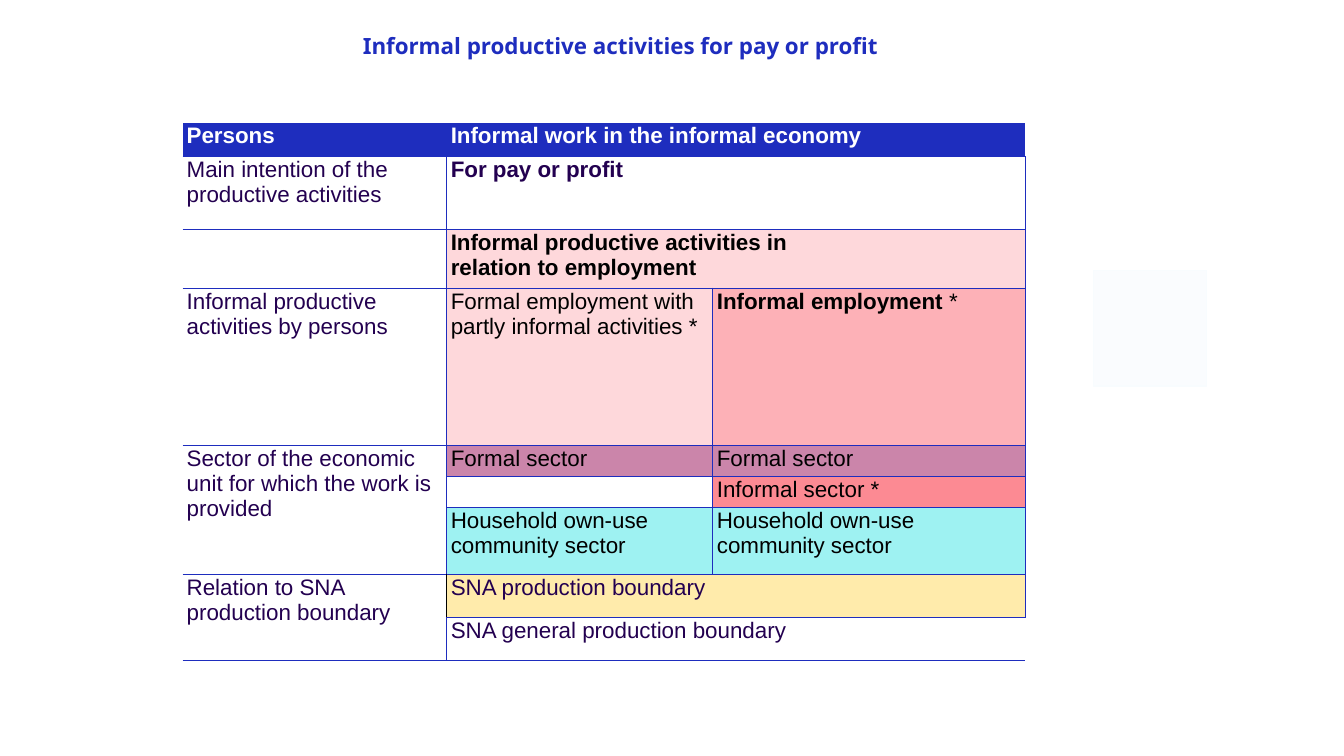
from lxml.etree import SubElement
from pptx import Presentation
from pptx.dml.color import RGBColor
from pptx.enum.shapes import MSO_SHAPE
from pptx.enum.text import PP_ALIGN
from pptx.oxml.ns import qn
from pptx.util import Pt

COLOURS = {
    "blue": "1E2DBE", "white": "FFFFFF", "purple": "230050", "black": "000000",
    "pale pink": "FED8DB", "pink": "FDB1B7", "mauve": "CB85AA", "red": "FC8A93",
    "aqua": "9EF2F2", "yellow": "FFEBAB", "mist": "F8FCFE",
}
EDGES = {
    "boxed": {"L": "blue", "R": "blue", "T": "blue", "B": "blue"},
    "label": {"R": "blue", "T": "blue", "B": "blue"},
    "header": {"B": "blue"},
    "relation": {"T": "blue", "B": "blue"},
    "boundary": {"L": "black", "R": "blue", "T": "blue", "B": "blue"},
    "general": {"L": "blue", "T": "blue", "B": "blue"},
}
COLUMN_WIDTHS = [93.6, 95.04, 190.08, 223.2]
ROW_HEIGHTS = [24.4, 52, 42, 112.2, 22.3, 22.3, 47.5, 31, 30.5]
MARGINS = {"margin_left": Pt(2.88), "margin_right": Pt(2.88),
           "margin_top": Pt(0.72), "margin_bottom": Pt(0.72)}
HOUSEHOLD = "Household own-use community sector"
CELLS = [
    (0, 0, 1, 1, [("Persons", True)], "white", "blue", "header"),
    (0, 1, 1, 1, [], "white", "blue", "header"),
    (0, 2, 1, 2, [("Informal work in the informal economy", True)], "white", "blue", "header"),
    (1, 0, 1, 2, [("Main intention of the productive activities", False)], "purple", None, "label"),
    (1, 2, 1, 2, [("For pay or profit", True)], "purple", None, "boxed"),
    (2, 0, 1, 2, [], "purple", None, "label"),
    (2, 2, 1, 2, [("Informal productive activities in\nrelation to employment", True)],
     "black", "pale pink", "boxed"),
    (3, 0, 1, 2, [("Informal productive\nactivities by persons", False)], "purple", None, "label"),
    (3, 2, 1, 1, [("Formal employment with partly informal activities *", False)],
     "black", "pale pink", "boxed"),
    (3, 3, 1, 1, [("Informal employment ", True), ("*", False)], "black", "pink", "boxed"),
    (4, 0, 3, 2, [("Sector of the economic unit for which the work is provided", False)],
     "purple", None, "label"),
    (4, 2, 1, 1, [("Formal sector", False)], "black", "mauve", "boxed"),
    (4, 3, 1, 1, [("Formal sector", False)], "black", "mauve", "boxed"),
    (5, 2, 1, 1, [], "black", None, "boxed"),
    (5, 3, 1, 1, [("Informal sector *", False)], "black", "red", "boxed"),
    (6, 2, 1, 1, [(HOUSEHOLD, False)], "black", "aqua", "boxed"),
    (6, 3, 1, 1, [(HOUSEHOLD, False)], "black", "aqua", "boxed"),
    (7, 0, 2, 2, [("Relation to SNA production boundary", False)], "purple", None, "relation"),
    (7, 2, 1, 2, [("SNA production boundary", False)], "purple", "yellow", "boundary"),
    (8, 2, 1, 2, [("SNA general production boundary", False)], "purple", None, "general"),
]


def rgb(name):
    """Return the named colour."""
    return RGBColor.from_string(COLOURS[name])


def set_values(target, values):
    """Set each attribute of the target from a dict."""
    for name, value in values.items():
        setattr(target, name, value)


def write_runs(paragraph, runs, colour, face):
    """Write (text, bold) runs at 16 points, breaking lines at newlines."""
    for text, bold in runs:
        for index, line in enumerate(text.split("\n")):
            if index:
                paragraph.add_line_break()
            run = paragraph.add_run()
            run.text = line
            set_values(run.font, {"size": Pt(16), "name": face, "bold": bold})
            run.font.color.rgb = rgb(colour)
    for line_break in paragraph._p.findall(qn("a:br")):
        SubElement(line_break, qn("a:rPr"), sz="1600")
    SubElement(paragraph._p, qn("a:endParaRPr"), sz="1600")


def draw_edges(cell, edges):
    """Draw one-point borders on the given sides of a cell."""
    properties = cell._tc.get_or_add_tcPr()
    for index, (side, colour) in enumerate(edges.items()):
        line = SubElement(properties, qn(f"a:ln{side}"), w=str(Pt(1)))
        fill = SubElement(line, qn("a:solidFill"))
        SubElement(fill, qn("a:srgbClr"), val=COLOURS[colour])
        properties.insert(index, line)


def fill_cell(table, row, column, height, width, runs, colour, fill, edges):
    """Merge, fill, border and write one cell of the table."""
    cell = table.cell(row, column)
    if height * width > 1:
        cell.merge(table.cell(row + height - 1, column + width - 1))
    set_values(cell, MARGINS)
    if fill:
        cell.fill.solid()
        cell.fill.fore_color.rgb = rgb(fill)
    else:
        cell.fill.background()
    draw_edges(cell, EDGES[edges])
    paragraph = cell.text_frame.paragraphs[0]
    paragraph.space_after = Pt(1)
    write_runs(paragraph, runs, colour, "Arial")


def add_title(slide):
    """Add the slide title."""
    title = slide.shapes.add_textbox(Pt(259.2), Pt(25.2), Pt(882.7), Pt(56.9))
    frame = title.text_frame
    set_values(frame, {"word_wrap": True, "margin_left": 0, "margin_right": 0,
                       "margin_top": 0, "margin_bottom": 0})
    heading = frame.paragraphs[0]
    set_values(heading, {"alignment": PP_ALIGN.LEFT, "line_spacing": 0.9})
    write_runs(heading, [("Informal productive activities for pay or profit", True)],
               "blue", "Noto Sans")


def add_pale_square(slide):
    """Add the translucent square beside the table."""
    square = slide.shapes.add_shape(MSO_SHAPE.RECTANGLE, Pt(781.2), Pt(193), Pt(80.6), Pt(82.8))
    square.shadow.inherit = False
    square.fill.solid()
    square.fill.fore_color.rgb = square.line.color.rgb = rgb("mist")
    square.line.width = Pt(1)
    colour = square._element.spPr.find(qn("a:solidFill")).find(qn("a:srgbClr"))
    SubElement(colour, qn("a:alpha"), val="70000")


def add_activities_table(slide):
    """Add the table of informal productive activities."""
    table = slide.shapes.add_table(len(ROW_HEIGHTS), len(COLUMN_WIDTHS), Pt(130.5), Pt(87.5),
                                   Pt(sum(COLUMN_WIDTHS)), Pt(sum(ROW_HEIGHTS))).table
    set_values(table, {"first_row": False, "horz_banding": False})
    style = table._tbl.tblPr.find(qn("a:tableStyleId"))
    style.text = "{2D5ABB26-0587-4C30-8999-92F81FD0307C}"
    for column, width in zip(table.columns, COLUMN_WIDTHS):
        column.width = Pt(width)
    for row, height in zip(table.rows, ROW_HEIGHTS):
        row.height = Pt(height)
    for entry in CELLS:
        fill_cell(table, *entry)


def main():
    """Build and save the slide."""
    presentation = Presentation()
    set_values(presentation, {"slide_width": Pt(960), "slide_height": Pt(540)})
    slide = presentation.slides.add_slide(presentation.slide_layouts[6])
    add_title(slide)
    add_pale_square(slide)
    add_activities_table(slide)
    presentation.save("out.pptx")


if __name__ == "__main__":
    main()
